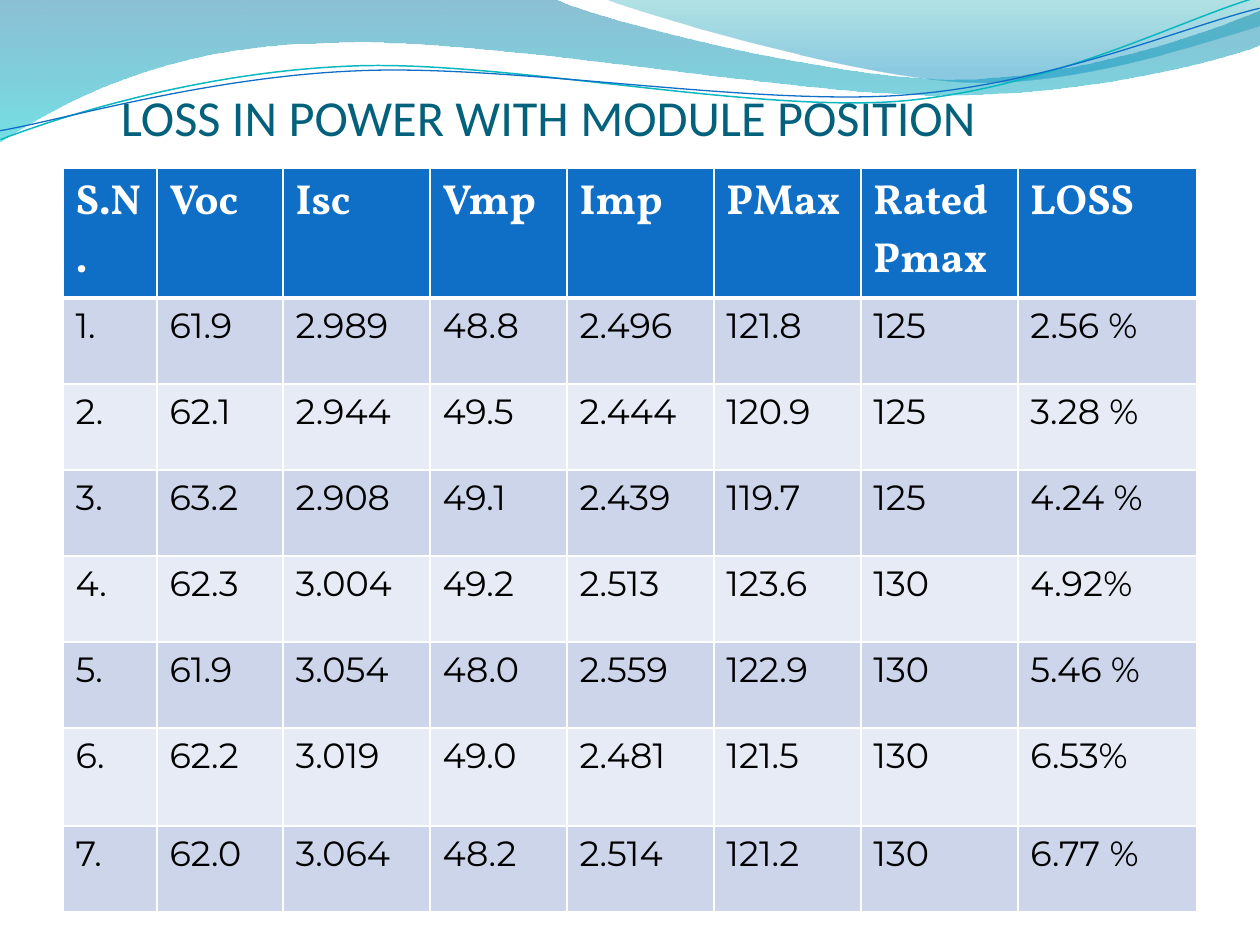
from dataclasses import dataclass

from lxml.etree import SubElement
from pptx import Presentation
from pptx.dml.color import RGBColor
from pptx.enum.text import MSO_ANCHOR, PP_ALIGN
from pptx.oxml.ns import qn
from pptx.util import Pt

EMU_PER_PX = 914400 / 126
STRAND_TILT = 357.3
Point = tuple[int, int]
Segment = list[Point]


@dataclass(frozen=True)
class Stop:
    """One gradient stop, with opacity in percent."""
    position: float
    colour: str
    opacity: int


@dataclass(frozen=True)
class Wave:
    """A closed ribbon; a segment of one point is a line, of three a cubic curve."""
    start: Point
    segments: list[Segment]
    stops: list[Stop]


@dataclass(frozen=True)
class Strand:
    """A thin open line of cubic curves, before it is tilted."""
    start: Point
    segments: list[Segment]
    colour: str
    width: float


WAVES = [
    Wave((0, 0),
         [[(554, -1)],
          [(600, 21), (837, 79), (955, 79)],
          [(1075, 79), (1207, 33), (1260, 11)],
          [(1261, 45)],
          [(1239, 55), (1096, 96), (940, 95)],
          [(784, 95), (481, 35), (324, 43)],
          [(163, 45), (58, 105), (-1, 142)]],
         [Stop(0, "0074A1", 45), Stop(1, "00C6CF", 55)]),
    Wave((604, -1),
         [[(641, 14), (859, 78), (969, 82)],
          [(1079, 86), (1211, 40), (1260, 26)],
          [(1260, 0)]],
         [Stop(0, "00A1A9", 30), Stop(0.8, "008BBF", 45)]),
]
STRANDS = [
    Strand((-2, 110),
           [[(58, 90), (199, 52), (350, 53)],
            [(499, 53), (745, 118), (896, 114)],
            [(1049, 109), (1184, 45), (1260, 27)]], "0AB8BF", 0.85),
    Strand((-2, 101),
           [[(57, 94), (207, 57), (357, 58)],
            [(509, 58), (750, 112), (902, 108)],
            [(1052, 104), (1188, 52), (1262, 38)]], "0F6FC6", 0.75),
]
COLUMN_WIDTHS = [94, 126, 147, 137, 147, 147, 157, 179]
ROW_HEIGHTS = [130, 86, 86, 86, 86, 86, 98, 86]
HEADINGS = ["S.N.", "Voc", "Isc", "Vmp", "Imp", "PMax", "Rated\nPmax", "LOSS"]
READINGS = [
    ["61.9", "2.989", "48.8", "2.496", "121.8", "125", "2.56 %"],
    ["62.1", "2.944", "49.5", "2.444", "120.9", "125", "3.28 %"],
    ["63.2", "2.908", "49.1", "2.439", "119.7", "125", "4.24 %"],
    ["62.3", "3.004", "49.2", "2.513", "123.6", "130", "4.92%"],
    ["61.9", "3.054", "48.0", "2.559", "122.9", "130", "5.46 %"],
    ["62.2", "3.019", "49.0", "2.481", "121.5", "130", "6.53%"],
    ["62.0", "3.064", "48.2", "2.514", "121.2", "130", "6.77 %"],
]


def px(value: int) -> int:
    """Turn pixels into EMU."""
    return round(value * EMU_PER_PX)


def rgb(colour: str) -> RGBColor:
    """Turn a hex string into a colour."""
    return RGBColor.from_string(colour)


def write(frame, text: str, *, font: str, size: float, colour: str, bold: bool = False,
          align: PP_ALIGN = PP_ALIGN.LEFT) -> None:
    """Fill a text frame, one paragraph per line of text."""
    frame.word_wrap = True
    for index, line in enumerate(text.split("\n")):
        para = frame.add_paragraph() if index else frame.paragraphs[0]
        para.alignment = align
        span = para.add_run()
        span.text = line
        span.font.name = font
        span.font.size = Pt(size)
        span.font.bold = bold
        span.font.color.rgb = rgb(colour)


def draw_outline(page, start: Point, segments: list[Segment], close: bool):
    """Draw a freeform of lines and cubic curves, without shadow."""
    points = [(px(x), px(y)) for segment in segments for x, y in segment]
    builder = page.shapes.build_freeform(px(start[0]), px(start[1]))
    builder.add_line_segments(points, close=close)
    shape = builder.convert_to_shape()
    shape.shadow.inherit = False
    lines = iter(list(shape.element.iter(qn("a:lnTo"))))
    for segment in segments:
        steps = [next(lines) for _ in segment]
        if len(steps) == 3:
            curve = steps[0].makeelement(qn("a:cubicBezTo"))
            steps[0].addprevious(curve)
            for step in steps:
                curve.append(step[0])
                step.getparent().remove(step)
    return shape


def draw_wave(page, wave: Wave) -> None:
    """Draw a ribbon with a translucent top-to-bottom gradient."""
    shape = draw_outline(page, wave.start, wave.segments, True)
    shape.line.fill.background()
    shape.fill.gradient()
    shape.fill.gradient_angle = 270
    for target, stop in zip(shape.fill.gradient_stops, wave.stops):
        target.position = stop.position
        target.color.rgb = rgb(stop.colour)
    for element, stop in zip(shape.element.iter(qn("a:srgbClr")), wave.stops):
        SubElement(element, qn("a:alpha"), val=str(stop.opacity * 1000))


def draw_strand(page, strand: Strand) -> None:
    """Draw a thin tilted open curve."""
    shape = draw_outline(page, strand.start, strand.segments, False)
    shape.rotation = STRAND_TILT
    shape.fill.background()
    shape.line.color.rgb = rgb(strand.colour)
    shape.line.width = Pt(strand.width)


def style_cell(cell, fill: str, top: float, bottom: float) -> None:
    """Give a cell white borders, in points, and a solid fill."""
    properties = cell._tc.get_or_add_tcPr()
    for side, width in (("L", 1), ("R", 1), ("T", top), ("B", bottom)):
        border = SubElement(properties, qn(f"a:ln{side}"), w=str(Pt(width)))
        SubElement(SubElement(border, qn("a:solidFill")), qn("a:srgbClr"), val="FFFFFF")
    cell.fill.solid()
    cell.fill.fore_color.rgb = rgb(fill)


def draw_title(page) -> None:
    """Draw the indented slide title."""
    frame = page.shapes.add_textbox(px(53), px(94), px(1134), px(53)).text_frame
    frame.margin_left, frame.margin_top = px(68), px(6)
    frame.margin_right = frame.margin_bottom = 0
    frame.vertical_anchor = MSO_ANCHOR.BOTTOM
    write(frame, "LOSS IN POWER WITH MODULE POSITION", font="Calibri", size=28.8,
          colour="04617B", align=PP_ALIGN.JUSTIFY)


def draw_table(page) -> None:
    """Draw the readings table with its header row."""
    rows = [HEADINGS] + [[f"{number}.", *row] for number, row in enumerate(READINGS, 1)]
    table = page.shapes.add_table(len(rows), len(HEADINGS), px(63), px(168),
                                  px(sum(COLUMN_WIDTHS)), px(sum(ROW_HEIGHTS))).table
    for column, width in zip(table.columns, COLUMN_WIDTHS):
        column.width = px(width)
    for index, (values, height) in enumerate(zip(rows, ROW_HEIGHTS)):
        table.rows[index].height = px(height)
        for cell, value in zip(table.rows[index].cells, values):
            if index == 0:
                style_cell(cell, "0F6FC6", 1, 3)
                write(cell.text_frame, value, font="Vollkorn", size=24, colour="FFFFFF", bold=True)
            else:
                style_cell(cell, "CCD5EA" if index % 2 else "E7EBF5", 3 if index == 1 else 1, 1)
                write(cell.text_frame, value, font="Montserrat", size=20, colour="000000")


def main() -> None:
    """Build and save the slide."""
    deck = Presentation()
    deck.slide_width, deck.slide_height = px(1260), px(945)
    page = deck.slides.add_slide(deck.slide_layouts[6])
    for wave in WAVES:
        draw_wave(page, wave)
    for strand in STRANDS:
        draw_strand(page, strand)
    draw_title(page)
    draw_table(page)
    deck.save("out.pptx")


if __name__ == "__main__":
    main()
